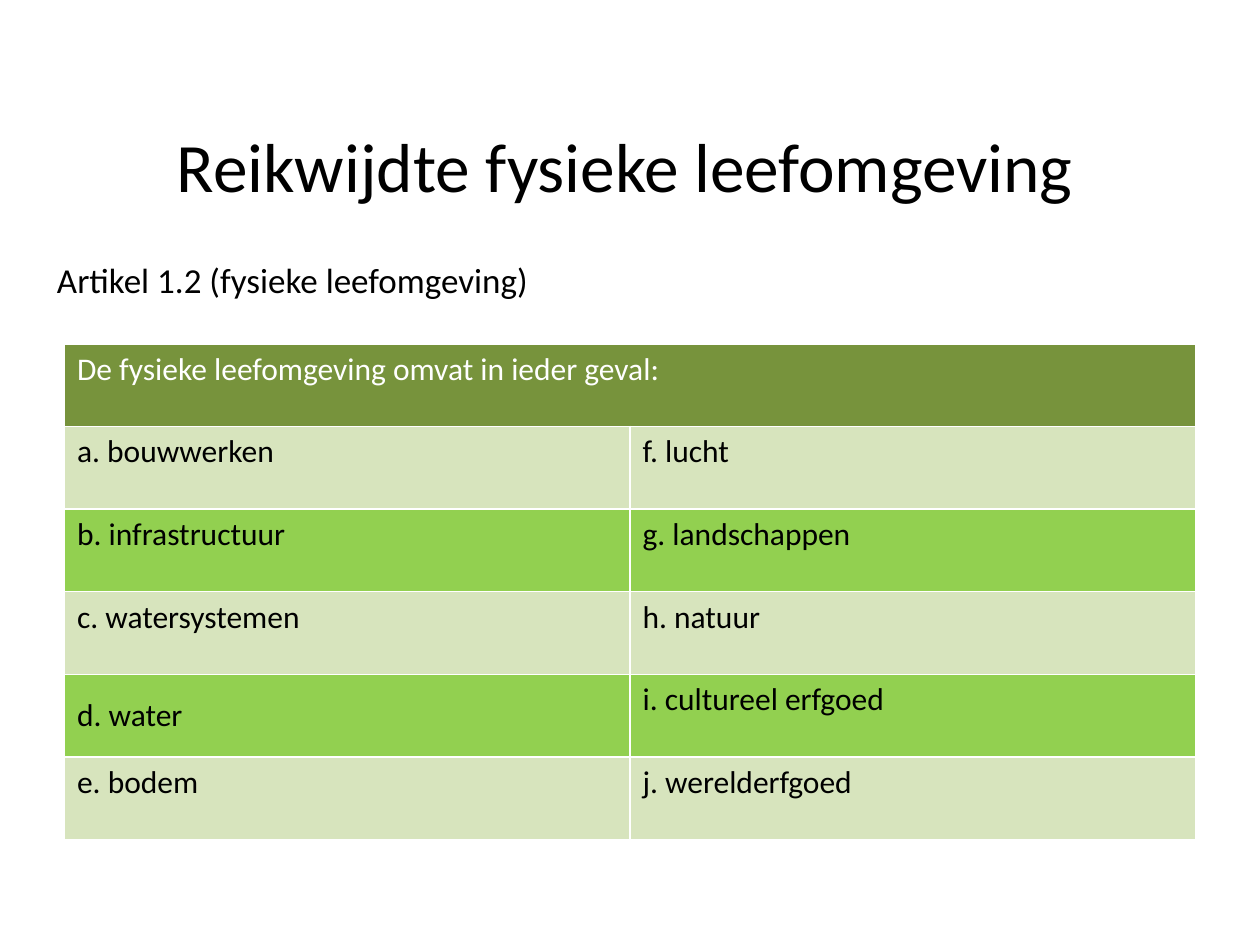
"""Build the slide on the scope of the physical living environment."""
from dataclasses import dataclass

from lxml import etree
from pptx import Presentation
from pptx.dml.color import RGBColor
from pptx.enum.text import MSO_ANCHOR, MSO_AUTO_SIZE, PP_ALIGN
from pptx.oxml.ns import qn
from pptx.util import Cm, Pt

LEFT, CENTER, JUSTIFY = PP_ALIGN.LEFT, PP_ALIGN.CENTER, PP_ALIGN.JUSTIFY
TOP, MIDDLE = MSO_ANCHOR.TOP, MSO_ANCHOR.MIDDLE
NO_AUTOFIT = MSO_AUTO_SIZE.NONE
TITLE_ONLY = 5


@dataclass(frozen=True)
class Theme:
    """Colours, font and type sizes of the slide."""
    font: str = "Calibri"
    title_size: float = 39.6
    subtitle_size: float = 20
    table_size: float = 18
    text: str = "000000"
    header_text: str = "FFFFFF"
    border: str = "FFFFFF"
    header_fill: str = "77933C"
    light_fill: str = "D7E4BD"
    bright_fill: str = "92D050"


@dataclass(frozen=True)
class Entry:
    """Wording of one table cell and its vertical anchor."""
    text: str
    anchor: MSO_ANCHOR = TOP


THEME = Theme()
HEADER = Entry("De fysieke leefomgeving omvat in ieder geval:")
ROWS = (
    (Entry("a. bouwwerken"), Entry("f. lucht")),
    (Entry("b. infrastructuur"), Entry("g. landschappen")),
    (Entry("c. watersystemen"), Entry("h. natuur")),
    (Entry("d. water", MIDDLE), Entry("i. cultureel erfgoed")),
    (Entry("e. bodem"), Entry("j. werelderfgoed")),
)


def write(frame, text: str, size: float, color: str, align: PP_ALIGN) -> None:
    """Fill a text frame with one formatted paragraph."""
    frame.text = text
    para = frame.paragraphs[0]
    para.alignment = align
    para.font.name = THEME.font
    para.font.size = Pt(size)
    para.font.bold = False
    para.font.color.rgb = RGBColor.from_string(color)


def add_borders(cell) -> None:
    """Draw a thin line on all four sides of a cell."""
    properties = cell._tc.get_or_add_tcPr()
    for side in ("a:lnL", "a:lnR", "a:lnT", "a:lnB"):
        line = etree.SubElement(properties, qn(side), w=str(Pt(1)))
        fill = etree.SubElement(line, qn("a:solidFill"))
        etree.SubElement(fill, qn("a:srgbClr"), val=THEME.border)


def style_cell(cell, fill: str) -> None:
    """Give a cell its borders and fill."""
    add_borders(cell)
    cell.fill.solid()
    cell.fill.fore_color.rgb = RGBColor.from_string(fill)


def add_scope_table(slide) -> None:
    """Add the table with a merged header and alternating rows."""
    frame = slide.shapes.add_table(len(ROWS) + 1, 2, Cm(1.3), Cm(6.93), Cm(22.8), Cm(10))
    table = frame.table
    header = table.cell(0, 0)
    header.merge(table.cell(0, 1))
    for cell in table.rows[0].cells:
        style_cell(cell, THEME.header_fill)
    write(header.text_frame, HEADER.text, THEME.table_size, THEME.header_text, LEFT)
    for row, entries in enumerate(ROWS, start=1):
        fill = THEME.light_fill if row % 2 else THEME.bright_fill
        for column, entry in enumerate(entries):
            cell = table.cell(row, column)
            style_cell(cell, fill)
            cell.vertical_anchor = entry.anchor
            write(cell.text_frame, entry.text, THEME.table_size, THEME.text, JUSTIFY)


def add_title(slide) -> None:
    """Place and format the title placeholder."""
    title = slide.shapes.title
    title.left, title.top, title.width, title.height = Cm(0.9), Cm(2.52), Cm(23.4), Cm(1.6)
    frame = title.text_frame
    frame.auto_size = NO_AUTOFIT
    frame.vertical_anchor = MIDDLE
    write(frame, "Reikwijdte fysieke leefomgeving", THEME.title_size, THEME.text, CENTER)


def add_subtitle(slide) -> None:
    """Add the line naming the article."""
    box = slide.shapes.add_textbox(Cm(0.9), Cm(5.08), Cm(20.8), Cm(1.11))
    box.text_frame.word_wrap = True
    write(box.text_frame, "Artikel 1.2 (fysieke leefomgeving)", THEME.subtitle_size, THEME.text, LEFT)


def main() -> None:
    """Build and save the deck."""
    deck = Presentation()
    deck.slide_width, deck.slide_height = Cm(25.4), Cm(19.05)
    page = deck.slides.add_slide(deck.slide_layouts[TITLE_ONLY])
    add_title(page)
    add_subtitle(page)
    add_scope_table(page)
    deck.save("out.pptx")


if __name__ == "__main__":
    main()
